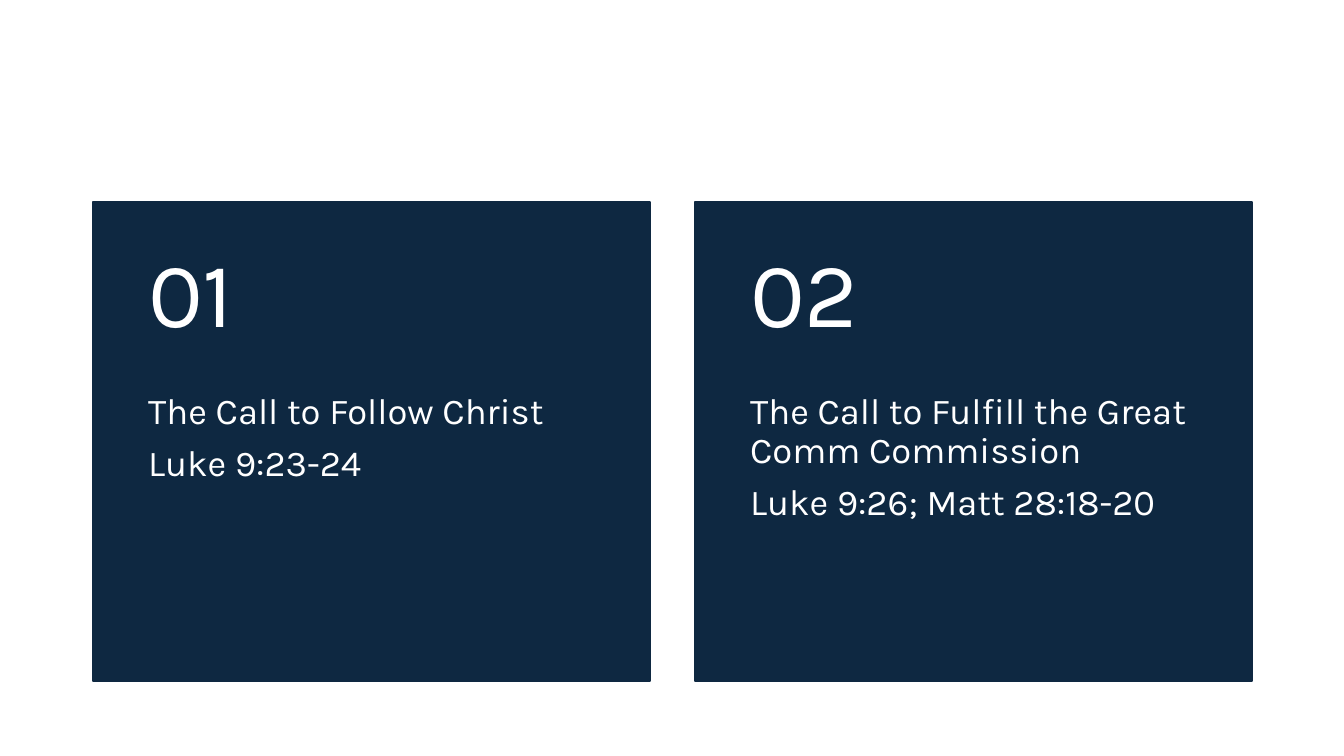
from pptx import Presentation
from pptx.dml.color import RGBColor
from pptx.enum.shapes import MSO_SHAPE
from pptx.enum.text import MSO_ANCHOR, PP_ALIGN
from pptx.util import Inches, Pt

RECTANGLE = MSO_SHAPE.RECTANGLE
TOP, MIDDLE = MSO_ANCHOR.TOP, MSO_ANCHOR.MIDDLE
LEFT = PP_ALIGN.LEFT

FONT = "Karla"
NAVY = "0E2841"
WHITE = "FFFFFF"

CARD_LEFT, CARD_TOP = 0.92, 2
CARD_WIDTH, CARD_HEIGHT = 5.53, 4.76
CARD_GAP = 0.44
NUMBER_HEIGHT = 1.9
SIDE_INSET = 0.55

CARDS = [
    ("01", ["The Call to Follow Christ", "Luke 9:23-24"]),
    ("02", ["The Call to Fulfill the Great Comm Commission",
            "Luke 9:26; Matt 28:18-20"]),
]


def color(hex_string):
    return RGBColor.from_string(hex_string)


def add_text(slide, lines, left, top, width, height, *, size, anchor,
             inset_top=0, inset_bottom=0):
    """Add a text box with one paragraph per line."""
    box = slide.shapes.add_textbox(
        Inches(left), Inches(top), Inches(width), Inches(height))
    frame = box.text_frame
    frame.word_wrap = True
    frame.vertical_anchor = anchor
    frame.margin_left = frame.margin_right = Inches(SIDE_INSET)
    frame.margin_top = Inches(inset_top)
    frame.margin_bottom = Inches(inset_bottom)
    frame.text = "\n".join(lines)
    for paragraph in frame.paragraphs:
        paragraph.alignment = LEFT
        paragraph.line_spacing = 0.9
        paragraph.space_after = Pt(size * 0.35)
        font = paragraph.runs[0].font
        font.name = FONT
        font.size = Pt(size)
        font.color.rgb = color(WHITE)


def add_card(slide, number, lines, left, top, width, height):
    """Add a navy card with a large number above its text."""
    # Background
    card = slide.shapes.add_shape(
        RECTANGLE, Inches(left), Inches(top), Inches(width), Inches(height))
    card.shadow.inherit = False
    card.fill.solid()
    card.fill.fore_color.rgb = color(NAVY)
    card.line.color.rgb = color(NAVY)
    card.line.width = Pt(1.5)

    # Topic and passage
    add_text(slide, lines, left, top + NUMBER_HEIGHT, width,
             height - NUMBER_HEIGHT, size=26, anchor=TOP, inset_bottom=0.36)

    # Number
    add_text(slide, [number], left, top, width, NUMBER_HEIGHT, size=66,
             anchor=MIDDLE, inset_top=0.18, inset_bottom=0.18)


def main():
    presentation = Presentation()
    presentation.slide_width = Inches(13.33)
    presentation.slide_height = Inches(7.5)
    slide = presentation.slides.add_slide(presentation.slide_layouts[6])
    slide.background.fill.solid()
    slide.background.fill.fore_color.rgb = color(WHITE)

    for index, (number, lines) in enumerate(CARDS):
        left = CARD_LEFT + index * (CARD_WIDTH + CARD_GAP)
        add_card(slide, number, lines, left, CARD_TOP, CARD_WIDTH, CARD_HEIGHT)

    presentation.save("out.pptx")


if __name__ == "__main__":
    main()
